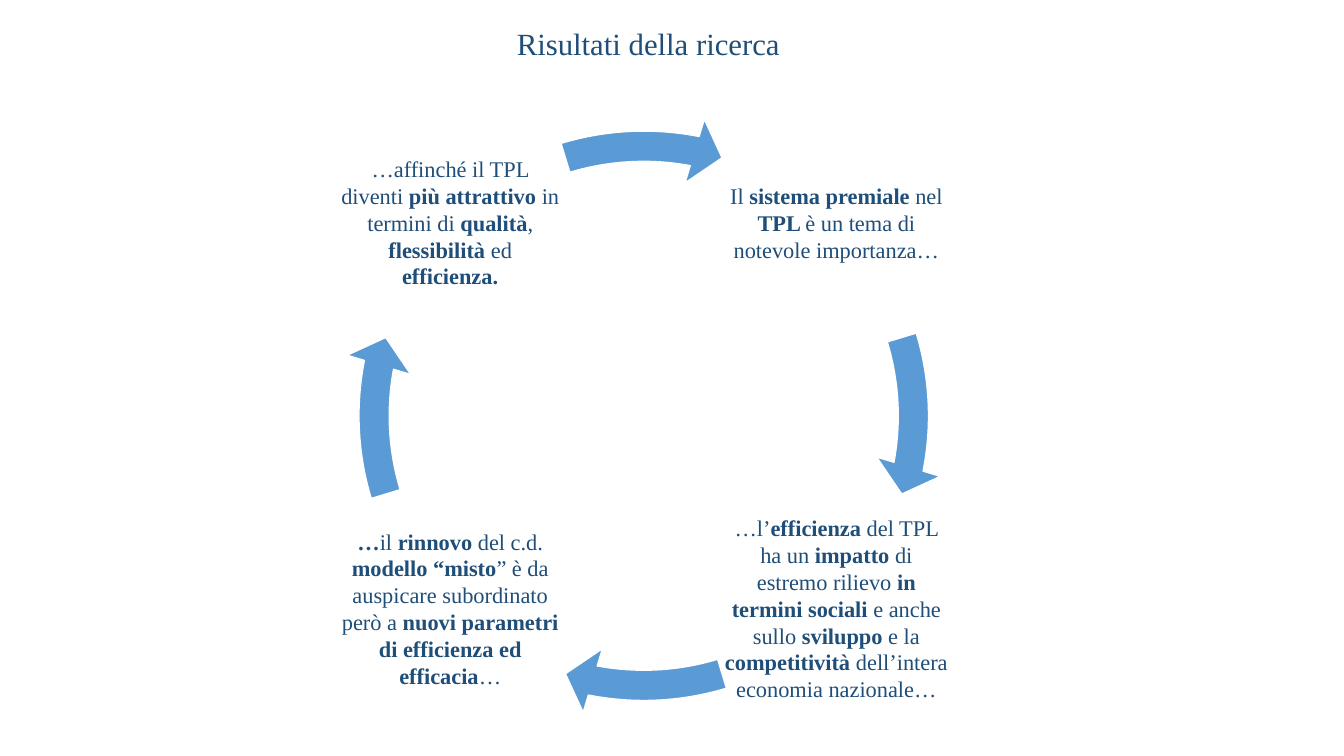
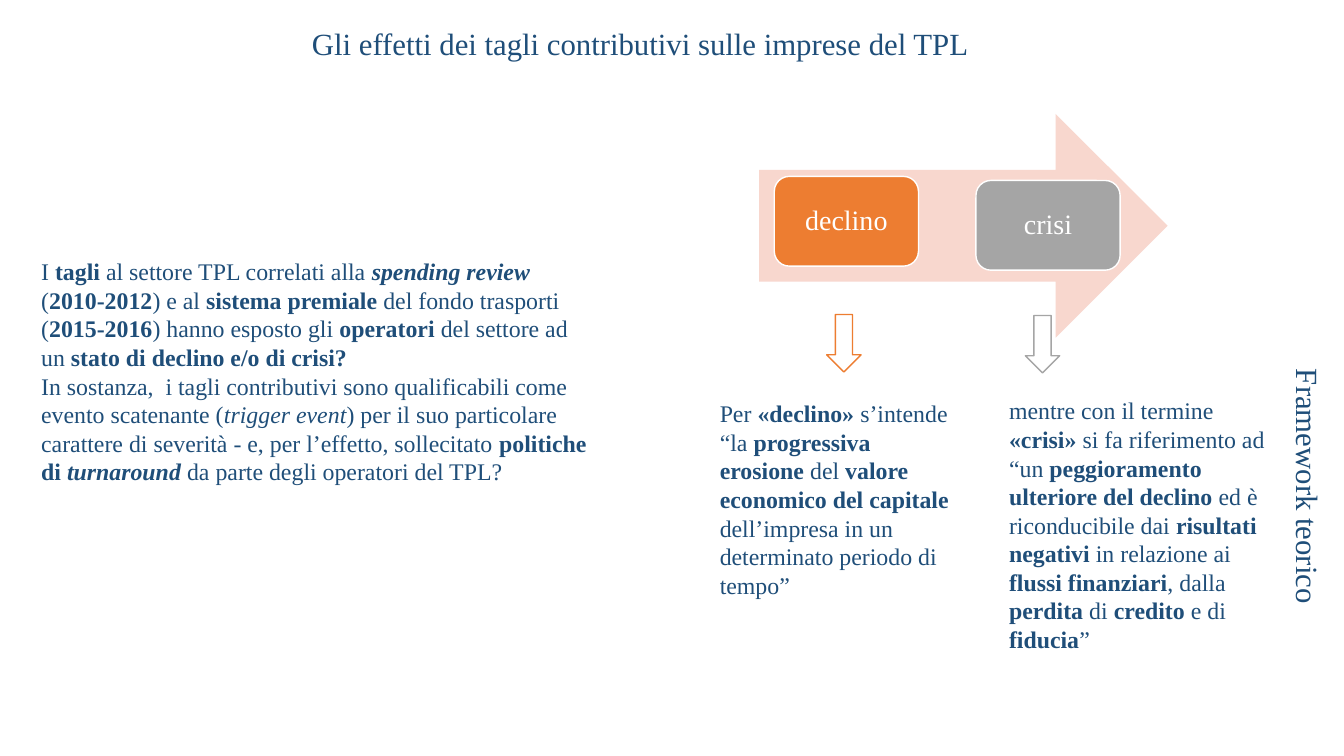
from dataclasses import dataclass

from pptx import Presentation
from pptx.dml.color import RGBColor
from pptx.enum.shapes import MSO_SHAPE as Shape
from pptx.enum.text import MSO_ANCHOR as Anchor
from pptx.enum.text import MSO_AUTO_SIZE as AutoSize
from pptx.enum.text import PP_ALIGN as Align
from pptx.util import Inches, Pt


@dataclass(frozen=True)
class Theme:
    font: str = "Times New Roman"
    navy: str = "1F4E79"
    blue: str = "5B9BD5"
    orange: str = "ED7D31"
    grey: str = "A5A5A5"
    peach: str = "F8D7CE"
    white: str = "FFFFFF"
    title_size: int = 22
    label_size: int = 20
    body_size: int = 17
    cycle_size: int = 16
    line_width: int = 1


def bold(text):
    return text, "b"


def italic(text):
    return text, "i"


def bold_italic(text):
    return text, "bi"


class Deck:
    def __init__(self, theme):
        self.theme = theme
        self.presentation = Presentation()
        self.presentation.slide_width = Inches(13.33)
        self.presentation.slide_height = Inches(7.5)
        self.slide = None

    def add_slide(self, title, left, width):
        blank = self.presentation.slide_layouts[6]
        self.slide = self.presentation.slides.add_slide(blank)
        self.heading(title, left, 0.2, width)

    def fill_text(self, frame, paragraphs, size, color, align):
        for index, runs in enumerate(paragraphs):
            paragraph = frame.paragraphs[0] if index == 0 else frame.add_paragraph()
            paragraph.alignment = align
            for part in runs:
                text, style = (part, "") if isinstance(part, str) else part
                run = paragraph.add_run()
                run.text = text
                run.font.name = self.theme.font
                run.font.size = Pt(size)
                run.font.bold = "b" in style
                run.font.italic = "i" in style
                run.font.color.rgb = RGBColor.from_string(color)

    def text_box(self, left, top, width, height):
        return self.slide.shapes.add_textbox(
            Inches(left), Inches(top), Inches(width), Inches(height))

    def set_insets(self, frame, inset):
        frame.margin_left = frame.margin_right = Inches(inset)
        frame.margin_top = frame.margin_bottom = Inches(inset)

    def heading(self, text, left, top, width, rotation=0):
        box = self.text_box(left, top, width, 0.47)
        box.rotation = rotation
        frame = box.text_frame
        frame.word_wrap = False
        frame.auto_size = AutoSize.SHAPE_TO_FIT_TEXT
        self.fill_text(frame, [[text]], self.theme.title_size, self.theme.navy, Align.CENTER)

    def body(self, left, top, width, height, paragraphs):
        frame = self.text_box(left, top, width, height).text_frame
        frame.word_wrap = True
        frame.auto_size = AutoSize.SHAPE_TO_FIT_TEXT
        self.fill_text(frame, paragraphs, self.theme.body_size, self.theme.navy, Align.LEFT)

    def cycle_text(self, left, top, side, runs):
        frame = self.text_box(left, top, side, side).text_frame
        frame.word_wrap = True
        frame.vertical_anchor = Anchor.MIDDLE
        self.set_insets(frame, 0.02)
        self.fill_text(frame, [runs], self.theme.cycle_size, self.theme.navy, Align.CENTER)

    def shape(self, kind, left, top, width, height, fill, line=None, adjustments=()):
        shape = self.slide.shapes.add_shape(
            kind, Inches(left), Inches(top), Inches(width), Inches(height))
        shape.shadow.inherit = False
        shape.fill.solid()
        shape.fill.fore_color.rgb = RGBColor.from_string(fill)
        if line:
            shape.line.color.rgb = RGBColor.from_string(line)
            shape.line.width = Pt(self.theme.line_width)
        else:
            shape.line.fill.background()
        for index, value in enumerate(adjustments):
            shape.adjustments[index] = value
        return shape

    def cycle_arrow(self, step):
        quarter, circle = 54, 216
        head = 6.53 + quarter * step
        tail = (205.87 + quarter * step) % circle
        self.shape(Shape.CIRCULAR_ARROW, 3.38, 1.12, 6.01, 6.01, self.theme.blue,
                   self.theme.white, (0.05, 3.6, head, tail, 0.055))

    def stage(self, label, left, top, color):
        card = self.shape(Shape.ROUNDED_RECTANGLE, left, top, 1.43, 0.89,
                          color, self.theme.white)
        frame = card.text_frame
        frame.word_wrap = True
        frame.vertical_anchor = Anchor.MIDDLE
        self.set_insets(frame, 0.08)
        self.fill_text(frame, [[label]], self.theme.label_size, self.theme.white, Align.CENTER)
        frame.paragraphs[0].line_spacing = 0.9

    def down_arrow(self, left, top, color):
        self.shape(Shape.DOWN_ARROW, left, top, 0.34, 0.57, self.theme.white, color)


def build_results(deck):
    deck.add_slide("Risultati della ricerca", 5.01, 2.84)
    left, right, top, bottom = 3.34, 7.17, 1.08, 4.91
    cycle = [
        (right, top, [
            "Il ", bold("sistema premiale "), "nel ", bold("TPL "),
            "è un tema di notevole importanza…"]),
        (right, bottom, [
            "…l’", bold("efficienza"), " del TPL ha un ", bold("impatto"),
            " di estremo rilievo ", bold("in termini sociali "), "e anche sullo ",
            bold("sviluppo"), " e la ", bold("competitività "),
            "dell’intera economia nazionale…"]),
        (left, bottom, [
            bold("…"), "il ", bold("rinnovo"), " del c.d. ", bold("modello “misto"),
            "” è da auspicare subordinato però a ",
            bold("nuovi parametri di efficienza ed efficacia"), "…"]),
        (left, top, [
            "…affinché il TPL diventi ", bold("più attrattivo"), " in termini di ",
            bold("qualità"), ", ", bold("flessibilità"), " ed ", bold("efficienza.")]),
    ]
    for step, (x, y, runs) in enumerate(cycle):
        deck.cycle_text(x, y, 2.25, runs)
        deck.cycle_arrow(step)


def build_effects(deck):
    theme = deck.theme
    deck.add_slide("Gli effetti dei tagli contributivi sulle imprese del TPL", 2.8, 7.1)
    deck.heading("Framework teorico", 11.58, 4.59, 2.79, rotation=90)

    deck.shape(Shape.RIGHT_ARROW, 7.53, 1.13, 4.05, 2.22, theme.peach)
    deck.stage("declino", 7.68, 1.75, theme.orange)
    deck.stage("crisi", 9.68, 1.79, theme.grey)
    deck.down_arrow(8.2, 3.12, theme.orange)
    deck.down_arrow(10.17, 3.13, theme.grey)

    deck.body(7.04, 3.91, 2.55, 2.1, [[
        "Per ", bold("«declino» "), "s’intende “la ", bold("progressiva erosione"),
        " del ", bold("valore economico del capitale "),
        "dell’impresa in un determinato periodo di tempo”"]])
    deck.body(9.91, 3.88, 2.84, 2.68, [[
        "mentre con il termine ", bold("«crisi» "), "si fa riferimento ad “un ",
        bold("peggioramento ulteriore del declino "), "ed è riconducibile dai ",
        bold("risultati negativi "), "in relazione ai ", bold("flussi finanziari"),
        ", dalla ", bold("perdita "), "di", bold(" credito"), " e di ",
        bold("fiducia"), "”"]])
    deck.body(0.31, 2.5, 5.68, 2.39, [
        ["I ", bold("tagli "), "al settore TPL correlati alla ",
         bold_italic("spending review "), "(", bold("2010-2012"), ") e al ",
         bold("sistema premiale "), "del fondo trasporti (", bold("2015-2016"),
         ") hanno esposto gli ", bold("operatori "), "del settore ad un ",
         bold("stato di declino e/o di crisi?")],
        ["In sostanza,  i tagli contributivi sono qualificabili come evento scatenante (",
         italic("trigger event"),
         ") per il suo particolare carattere di severità - e, per l’effetto, sollecitato ",
         bold("politiche di "), bold_italic("turnaround "),
         "da parte degli operatori del TPL?"]])


def main():
    deck = Deck(Theme())
    build_results(deck)
    build_effects(deck)
    deck.presentation.save("out.pptx")


if __name__ == "__main__":
    main()
